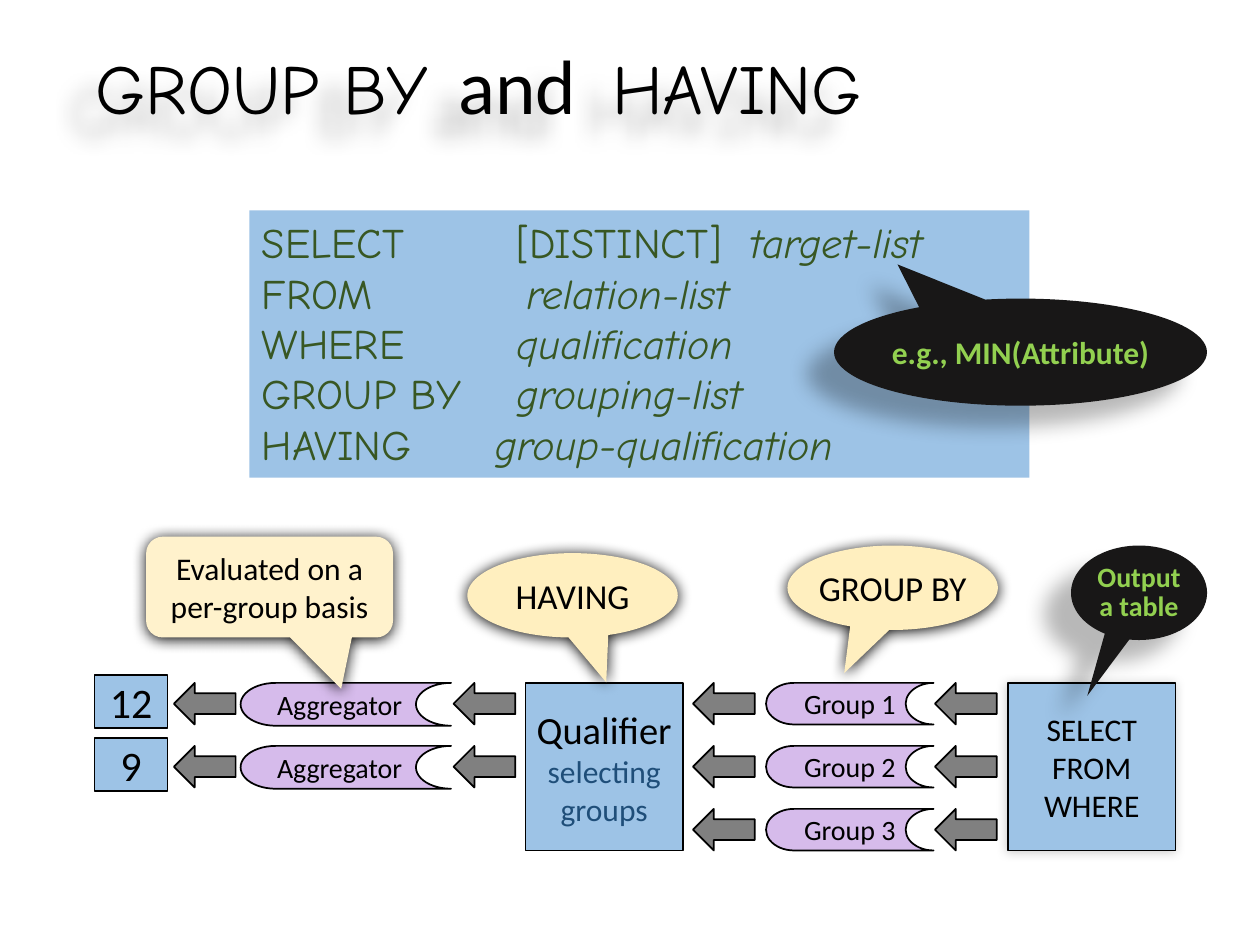
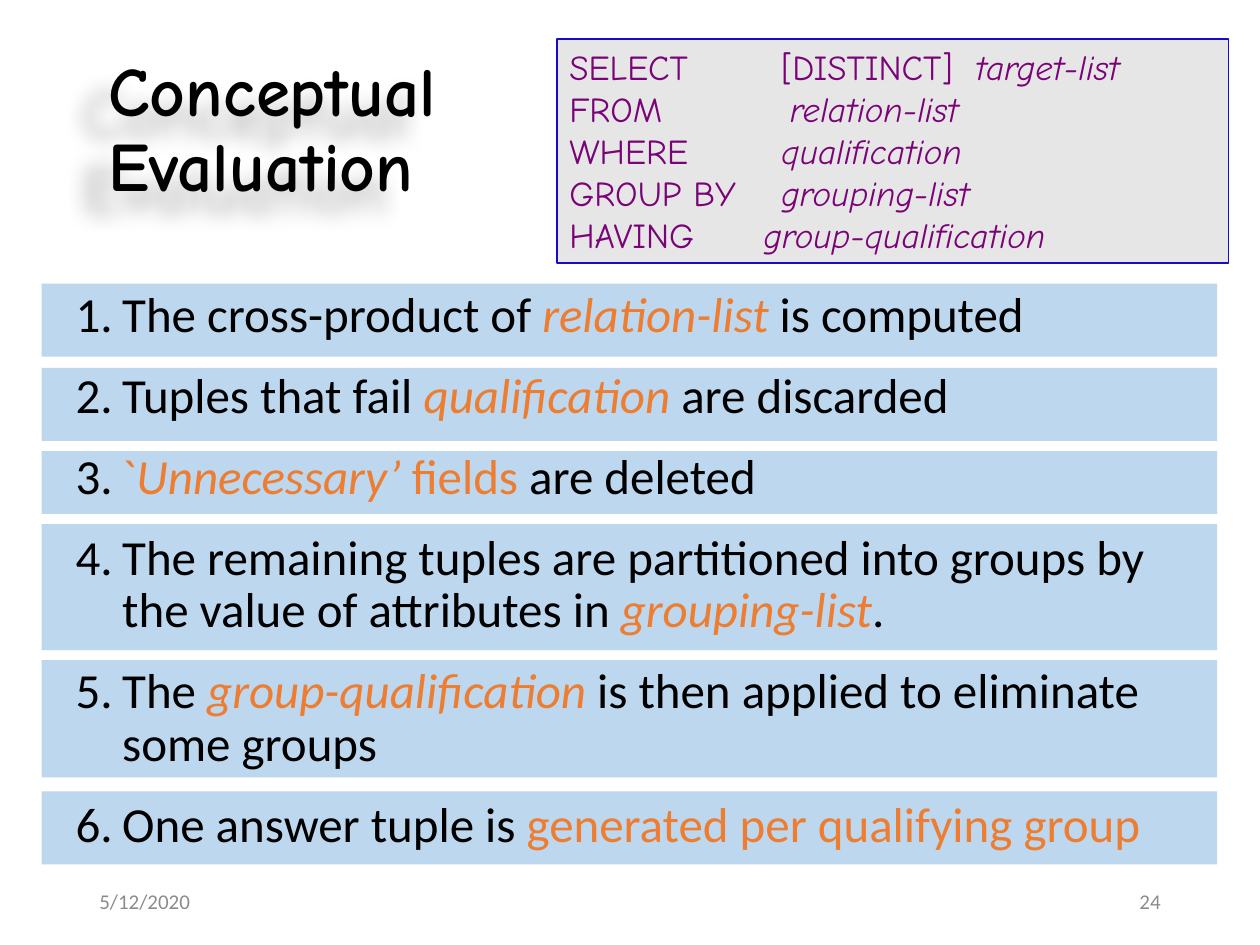
from lxml.etree import SubElement
from pptx import Presentation
from pptx.dml.color import RGBColor
from pptx.enum.shapes import MSO_SHAPE
from pptx.enum.text import MSO_ANCHOR, MSO_AUTO_SIZE, PP_ALIGN
from pptx.oxml.ns import qn
from pptx.util import Inches, Pt

BLACK = RGBColor(0x00, 0x00, 0x00)
BLUE = RGBColor(0x9D, 0xC3, 0xE6)
PALE_BLUE = RGBColor(0xBD, 0xD7, 0xEE)
DARK_BLUE = RGBColor(0x1F, 0x4E, 0x79)
INK_BLUE = RGBColor(0x18, 0x0B, 0xC7)
LILAC = RGBColor(0xD6, 0xBB, 0xEB)
PURPLE = RGBColor(0x7B, 0x03, 0x78)
GREY = RGBColor(0x80, 0x80, 0x80)
LIGHT_GREY = RGBColor(0xE7, 0xE6, 0xE6)
FOOTER_GREY = RGBColor(0x8C, 0x8C, 0x8C)
DARK_GREEN = RGBColor(0x38, 0x57, 0x23)
LIME = RGBColor(0x92, 0xD0, 0x50)
CREAM = RGBColor(0xFF, 0xEF, 0xBF)
PALE_CREAM = RGBColor(0xFF, 0xF2, 0xCC)
CHARCOAL = RGBColor(0x18, 0x17, 0x17)
ORANGE = RGBColor(0xED, 0x7D, 0x31)
BODY_FONT = "Calibri"
CODE_FONT = "Comic Neue"

FAR_SHADOW = (28, 11.8, 19.7, 141)
GLOW_SHADOW = (100, 8.5, 1, 90)
SOFT_SHADOW = (20, 6, 1, 135)


def add_run(paragraph, text, size, color, font=BODY_FONT, bold=False, italic=False):
    run = paragraph.add_run()
    run.text = text
    run.font.name = font
    run.font.size = Pt(size)
    run.font.color.rgb = color
    run.font.bold = bold
    run.font.italic = italic


def add_part(slide, preset, place, fill, line=None, lines=(), size=18,
             color=BLACK, bold=False, sides=(0.1, 0.1), ends=0.05):
    part = slide.shapes.add_shape(preset, *map(Inches, place))
    part.shadow.inherit = False
    part.fill.solid()
    part.fill.fore_color.rgb = fill
    if line is None:
        part.line.fill.background()
    else:
        part.line.color.rgb = line
        part.line.width = Pt(1)
    frame = part.text_frame
    frame.word_wrap = True
    frame.margin_left, frame.margin_right = map(Inches, sides)
    frame.margin_top = frame.margin_bottom = Inches(ends)
    for number, text in enumerate(lines):
        paragraph = frame.add_paragraph() if number else frame.paragraphs[0]
        paragraph.alignment = PP_ALIGN.CENTER
        add_run(paragraph, text, size, color, bold=bold)
    return part


deck = Presentation()
deck.slide_width = Inches(10)
deck.slide_height = Inches(7.5)
grouping = deck.slides.add_slide(deck.slide_layouts[5])
evaluation = deck.slides.add_slide(deck.slide_layouts[1])
shadows = []

for slide, place in (
    (grouping, (0.66, 0.17, 8.26, 1.08)),
    (evaluation, (0.76, 0.44, 3.58, 1.21)),
):
    title = slide.shapes.title
    title.left, title.top, title.width, title.height = map(Inches, place)
    title.text_frame.auto_size = MSO_AUTO_SIZE.NONE
    title.text_frame.word_wrap = True
    title.text_frame.vertical_anchor = MSO_ANCHOR.MIDDLE
    heading = title.text_frame.paragraphs[0]
    heading.alignment = PP_ALIGN.LEFT
    heading.line_spacing = 0.9
    shadows.append((title, FAR_SHADOW))

heading = grouping.shapes.title.text_frame.paragraphs[0]
heading_tabs = SubElement(heading._p.get_or_add_pPr(), qn("a:tabLst"))
for stop in (2.88, 4.1):
    SubElement(heading_tabs, qn("a:tab"), pos=str(Inches(stop)), algn="l")
add_run(heading, "GROUP BY\t", 40, BLACK, CODE_FONT)
add_run(heading, "and\t", 44, BLACK)
add_run(heading, "HAVING", 40, BLACK, CODE_FONT)
heading = evaluation.shapes.title.text_frame.paragraphs[0]
add_run(heading, "Conceptual Evaluation", 39.6, BLACK, CODE_FONT, bold=True)

CLAUSES = [
    ("SELECT\t[DISTINCT]\t", "target-list", (2.02, 3.87)),
    ("FROM\t", "relation-list", (2.1,)),
    ("WHERE\t", "qualification", (2.02,)),
    ("GROUP BY\t", "grouping-list", (2.02,)),
    ("HAVING\t", "group-qualification", (1.85,)),
]
for slide, place, fill, line, size, color in (
    (grouping, (1.98, 1.67, 6.19, 2.12), BLUE, None, 24, DARK_GREEN),
    (evaluation, (4.42, 0.31, 5.33, 1.78), LIGHT_GREY, INK_BLUE, 20, PURPLE),
):
    query = add_part(slide, MSO_SHAPE.RECTANGLE, place, fill, line).text_frame
    query.vertical_anchor = MSO_ANCHOR.TOP
    for number, (keyword, argument, stops) in enumerate(CLAUSES):
        clause = query.add_paragraph() if number else query.paragraphs[0]
        clause.alignment = PP_ALIGN.LEFT
        tabs = SubElement(clause._p.get_or_add_pPr(), qn("a:tabLst"))
        for stop in stops:
            SubElement(tabs, qn("a:tab"), pos=str(Inches(stop * size / 24)), algn="l")
        add_run(clause, keyword, size, color, CODE_FONT)
        add_run(clause, argument, size, color, CODE_FONT, italic=True)

source_table = add_part(grouping, MSO_SHAPE.RECTANGLE, (8, 5.42, 1.33, 1.33), BLUE, BLACK,
                        ["SELECT", "FROM", "WHERE"])
shadows.append((source_table, SOFT_SHADOW))
qualifier = add_part(grouping, MSO_SHAPE.RECTANGLE, (4.17, 5.42, 1.25, 1.33), BLUE, BLACK,
                     ["Qualifier "], 22, sides=(0, 0))
add_run(qualifier.text_frame.paragraphs[0], "selecting groups", 18, DARK_BLUE)

ROW_TOP, ROW_STEP = 5.42, 0.5
for row in range(3):
    top = ROW_TOP + row * ROW_STEP
    add_part(grouping, MSO_SHAPE.FLOWCHART_STORED_DATA, (6.08, top, 1.33, 0.33), LILAC, BLACK,
             [f"Group {row + 1}"], 16, sides=(0, 0))
    for left in (7.42, 5.5):
        add_part(grouping, MSO_SHAPE.LEFT_ARROW, (left, top, 0.49, 0.33), GREY, BLACK)

for row, answer in enumerate(("12", "9")):
    top = ROW_TOP + row * ROW_STEP
    add_part(grouping, MSO_SHAPE.FLOWCHART_STORED_DATA, (1.91, top, 1.67, 0.34), LILAC, BLACK,
             ["Aggregator"], 16, sides=(0, 0.1))
    for left in (3.6, 1.38):
        add_part(grouping, MSO_SHAPE.LEFT_ARROW, (left, top, 0.49, 0.33), GREY, BLACK)
    add_part(grouping, MSO_SHAPE.RECTANGLE, (0.75, top - 0.06, 0.58, 0.42), BLUE, BLACK,
             [answer], 24)

OVAL = MSO_SHAPE.OVAL_CALLOUT
ROUNDED = MSO_SHAPE.ROUNDED_RECTANGULAR_CALLOUT
for preset, place, pointer, fill, text, size, color, margin, shadow in (
    (OVAL, (6.25, 4.33, 1.67, 0.67), (-0.23, 1.01), CREAM, "GROUP BY", 20, BLACK, 0, GLOW_SHADOW),
    (OVAL, (3.71, 4.39, 1.67, 0.67), (0.16, 1.03), CREAM, "HAVING", 20, BLACK, 0, GLOW_SHADOW),
    (OVAL, (6.62, 2.37, 2.96, 0.85), (-0.33, -0.82), CHARCOAL, "e.g., MIN(Attribute)", 18, LIME,
     0, FAR_SHADOW),
    (OVAL, (8.5, 4.33, 1.08, 0.75), (-0.38, 1.09), CHARCOAL, "Output a table", 16, LIME,
     0, FAR_SHADOW),
    (ROUNDED, (1.16, 4.26, 1.96, 0.8), (0.29, 1.01), PALE_CREAM, "Evaluated on a per-group basis",
     18, BLACK, 0.1, GLOW_SHADOW),
):
    callout = add_part(grouping, preset, place, fill, None, [text], size, color,
                       bold=color == LIME, sides=(margin, margin), ends=margin / 2)
    callout.adjustments[0], callout.adjustments[1] = pointer
    if text == "Output a table":
        callout.text_frame.paragraphs[0].line_spacing = Pt(17)
    shadows.append((callout, shadow))

for shape, (opacity, blur, distance, angle) in shadows:
    shape.shadow.inherit = False
    effects = shape._element.spPr.find(qn("a:effectLst"))
    outer = SubElement(effects, qn("a:outerShdw"), blurRad=str(Pt(blur)), dist=str(Pt(distance)),
                       dir=str(angle * 60000), algn="ctr", rotWithShape="0")
    shade = SubElement(outer, qn("a:srgbClr"), val=str(BLACK))
    SubElement(shade, qn("a:alpha"), val=str(opacity * 1000))

steps = evaluation.placeholders[1]
for top, height in ((2.25, 0.58), (2.92, 0.58), (3.58, 0.5), (4.16, 1), (5.24, 0.93), (6.28, 0.58)):
    band = add_part(evaluation, MSO_SHAPE.RECTANGLE, (0.33, top, 9.33, height), PALE_BLUE)
    steps._element.addprevious(band._element)

steps.left, steps.top, steps.width, steps.height = map(Inches, (0.5, 2.25, 8.92, 5))
steps.text_frame.auto_size = MSO_AUTO_SIZE.NONE
STEPS = [
    [("The cross-product of ", BLACK, False), ("relation-list", ORANGE, True),
     (" is computed", BLACK, False)],
    [("Tuples that fail ", BLACK, False), ("qualification", ORANGE, True),
     (" are discarded", BLACK, False)],
    [("`", ORANGE, False), ("Unnecessary’", ORANGE, True), (" fields ", ORANGE, False),
     ("are deleted", BLACK, False)],
    [("The remaining tuples are partitioned into groups by the value of attributes in ",
      BLACK, False), ("grouping-list", ORANGE, True), (".", BLACK, False)],
    [("The ", BLACK, False), ("group-qualification", ORANGE, True),
     (" is then applied to eliminate some groups", BLACK, False)],
    [("One answer tuple is ", BLACK, False), ("generated per qualifying group", ORANGE, False)],
]
for number, runs in enumerate(STEPS):
    step = steps.text_frame.add_paragraph() if number else steps.text_frame.paragraphs[0]
    properties = step._p.get_or_add_pPr()
    properties.set("marL", str(Inches(0.37)))
    properties.set("indent", str(Inches(-0.37)))
    number_color = SubElement(properties, qn("a:buClr"))
    SubElement(number_color, qn("a:srgbClr"), val=str(BLACK))
    SubElement(properties, qn("a:buFont"), typeface=BODY_FONT)
    SubElement(properties, qn("a:buAutoNum"), type="arabicPeriod")
    step.line_spacing = 0.9
    step.space_before = Pt(10 if number else 0)
    step.space_after = Pt(6)
    for text, color, italic in runs:
        add_run(step, text, 28, color, italic=italic)

for left, text, alignment in ((0.69, "5/12/2020", PP_ALIGN.LEFT), (7.06, "24", PP_ALIGN.RIGHT)):
    footer = evaluation.shapes.add_textbox(*map(Inches, (left, 6.95, 2.25, 0.4))).text_frame
    footer.word_wrap = True
    footer.vertical_anchor = MSO_ANCHOR.MIDDLE
    footer.paragraphs[0].alignment = alignment
    add_run(footer.paragraphs[0], text, 12, FOOTER_GREY)

deck.save("out.pptx")
